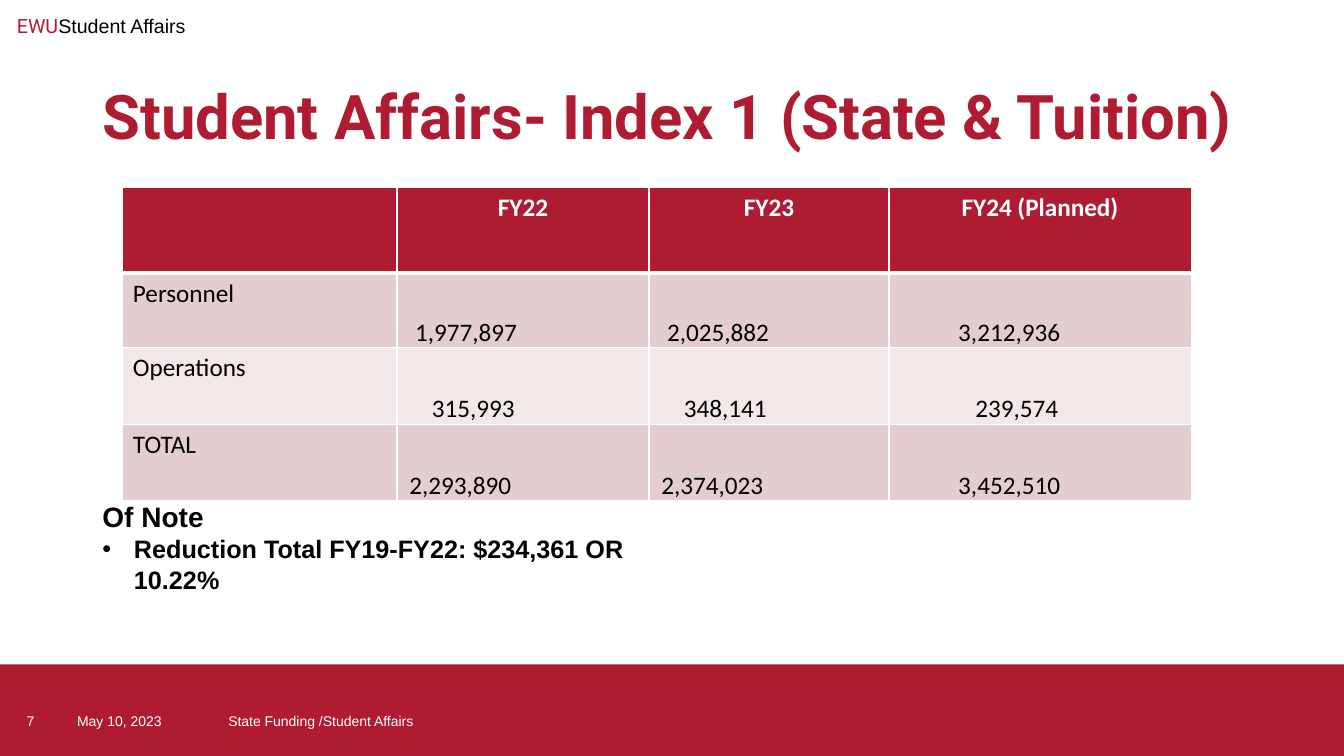
from dataclasses import dataclass

from lxml import etree
from pptx import Presentation
from pptx import util as u
from pptx.dml.color import RGBColor
from pptx.enum import shapes, text
from pptx.oxml import ns

Pt = u.Pt


@dataclass(frozen=True)
class Theme:
    red: str = "AF1C32"
    white: str = "FEFFFF"
    black: str = "000000"
    band_dark: str = "E3CDCE"
    band_light: str = "F2E8E8"
    title_font: str = "Roboto"
    text_font: str = "Arial"
    table_font: str = "Calibri"
    title_size: float = 44
    heading_size: float = 20
    body_size: float = 18
    header_size: float = 14
    footer_size: float = 10


@dataclass(frozen=True)
class Box:
    left: float
    top: float
    width: float
    height: float

    def lengths(self):
        return Pt(self.left), Pt(self.top), Pt(self.width), Pt(self.height)


@dataclass(frozen=True)
class FooterItem:
    label: str
    left: float
    width: float


@dataclass(frozen=True)
class BudgetRow:
    label: str
    amounts: tuple[str, ...]
    indents: tuple[float, ...]
    height: float
    fill: str


THEME = Theme()
SLIDE_WIDTH, SLIDE_HEIGHT = 960, 540
BAND_TOP = 474.5
TABLE_BOX = Box(87.8, 133.9, 763.2, 224)
COLUMN_WIDTHS = (195.8, 180, 171.4, 216)
HEADINGS = ("", "FY22", "FY23", "FY24 (Planned)")
HEADING_HEIGHT = 61.2
BUDGET_ROWS = (
    BudgetRow("Personnel", ("1,977,897", "2,025,882", "3,212,936"),
              (13, 13, 49.5), 53.3, THEME.band_dark),
    BudgetRow("Operations", ("315,993", "348,141", "239,574"),
              (25, 25, 61.8), 54.7, THEME.band_light),
    BudgetRow("TOTAL", ("2,293,890", "2,374,023", "3,452,510"),
              (8.8, 8.8, 49.5), 54.7, THEME.band_dark),
)
FOOTER_ITEMS = (
    FooterItem("7", 12, 36),
    FooterItem("May 10, 2023", 48, 107),
    FooterItem("State Funding /Student Affairs", 156, 324),
)


def write(paragraph, content: str, *, size: float, font: str = THEME.text_font,
          color: str = THEME.black, bold: bool = False, align=text.PP_ALIGN.LEFT) -> None:
    """Append one formatted run to a paragraph."""
    paragraph.alignment = align
    run = paragraph.add_run()
    run.text = content
    run.font.name = font
    run.font.size = Pt(size)
    run.font.bold = bold
    run.font.color.rgb = RGBColor.from_string(color)


def place(shape, box: Box) -> None:
    shape.left, shape.top, shape.width, shape.height = box.lengths()


def add_text_box(slide, box: Box, anchor=text.MSO_ANCHOR.TOP):
    """Add a wrapping text box and return its first paragraph."""
    frame = slide.shapes.add_textbox(*box.lengths()).text_frame
    frame.word_wrap = True
    frame.vertical_anchor = anchor
    return frame.paragraphs[0]


def set_bullet(paragraph, character: str = "", indent: float = 0) -> None:
    properties = paragraph._p.get_or_add_pPr()
    properties.set("marL", str(Pt(indent)))
    properties.set("indent", str(-Pt(indent)))
    bullet = etree.SubElement(properties, ns.qn("a:buChar" if character else "a:buNone"))
    if character:
        bullet.set("char", character)


def set_borders(cell, top: float = 1, bottom: float = 1) -> None:
    properties = cell._tc.get_or_add_tcPr()
    for side, width in (("L", 1), ("R", 1), ("T", top), ("B", bottom)):
        line = etree.SubElement(properties, ns.qn(f"a:ln{side}"), w=str(Pt(width)))
        fill = etree.SubElement(line, ns.qn("a:solidFill"))
        etree.SubElement(fill, ns.qn("a:srgbClr"), val=THEME.white)


def fill_solid(fill, color: str) -> None:
    fill.solid()
    fill.fore_color.rgb = RGBColor.from_string(color)


def add_footer(slide) -> None:
    band = slide.shapes.add_shape(
        shapes.MSO_SHAPE.RECTANGLE,
        *Box(0, BAND_TOP, SLIDE_WIDTH, SLIDE_HEIGHT - BAND_TOP).lengths())
    band.shadow.inherit = False
    fill_solid(band.fill, THEME.red)
    band.line.fill.background()
    for item in FOOTER_ITEMS:
        paragraph = add_text_box(slide, Box(item.left, 500.4, item.width, 28.8),
                                 text.MSO_ANCHOR.MIDDLE)
        write(paragraph, item.label, size=THEME.footer_size, color=THEME.white)


def add_header(slide) -> None:
    paragraph = add_text_box(slide, Box(5, 6.5, 146, 24.5))
    write(paragraph, "EWU", size=THEME.header_size, font=THEME.title_font, color=THEME.red)
    write(paragraph, "Student Affairs", size=THEME.header_size)


def fill_title(title) -> None:
    place(title, Box(66, 37.5, 828, 95.8))
    frame = title.text_frame
    frame.auto_size = text.MSO_AUTO_SIZE.NONE
    frame.vertical_anchor = text.MSO_ANCHOR.MIDDLE
    paragraph = frame.paragraphs[0]
    paragraph.line_spacing = 0.9
    write(paragraph, "Student Affairs- Index 1 (State & Tuition)", size=THEME.title_size,
          font=THEME.title_font, color=THEME.red, bold=True)


def fill_notes_list(body) -> None:
    place(body, Box(66, 353.5, 414, 76.5))
    frame = body.text_frame
    frame.auto_size = text.MSO_AUTO_SIZE.NONE
    heading, item = frame.paragraphs[0], frame.add_paragraph()
    set_bullet(heading)
    set_bullet(item, "•", 22.5)
    heading.space_before = item.space_before = Pt(0)
    write(heading, "Of Note", size=THEME.heading_size, bold=True)
    write(item, "Reduction Total FY19-FY22: $234,361 OR 10.22%",
          size=THEME.body_size, bold=True)


def add_budget_table(slide) -> None:
    table = slide.shapes.add_table(len(BUDGET_ROWS) + 1, len(HEADINGS),
                                   *TABLE_BOX.lengths()).table
    for column, width in zip(table.columns, COLUMN_WIDTHS):
        column.width = Pt(width)
    table.rows[0].height = Pt(HEADING_HEIGHT)
    for cell, heading in zip(table.rows[0].cells, HEADINGS):
        set_borders(cell, bottom=3)
        fill_solid(cell.fill, THEME.red)
        if heading:
            write(cell.text_frame.paragraphs[0], heading, size=THEME.body_size,
                  font=THEME.table_font, color=THEME.white, bold=True,
                  align=text.PP_ALIGN.CENTER)
    for number, row in enumerate(BUDGET_ROWS, start=1):
        table.rows[number].height = Pt(row.height)
        cells = list(table.rows[number].cells)
        for cell, content in zip(cells, (row.label, *row.amounts)):
            set_borders(cell, top=3 if number == 1 else 1)
            fill_solid(cell.fill, row.fill)
            write(cell.text_frame.paragraphs[0], content, size=THEME.body_size,
                  font=THEME.table_font)
        for cell, indent in zip(cells[1:], row.indents):
            cell.vertical_anchor = text.MSO_ANCHOR.BOTTOM
            cell.margin_left = Pt(indent)
            cell.margin_top = cell.margin_right = Pt(0.7)
            cell.margin_bottom = Pt(0)


def main() -> None:
    presentation = Presentation()
    presentation.slide_width, presentation.slide_height = Pt(SLIDE_WIDTH), Pt(SLIDE_HEIGHT)
    slide = presentation.slides.add_slide(presentation.slide_layouts[1])
    fill_solid(slide.background.fill, THEME.white)
    fill_title(slide.shapes.title)
    fill_notes_list(slide.placeholders[1])
    add_footer(slide)
    add_header(slide)
    add_budget_table(slide)
    presentation.save("out.pptx")


if __name__ == "__main__":
    main()
